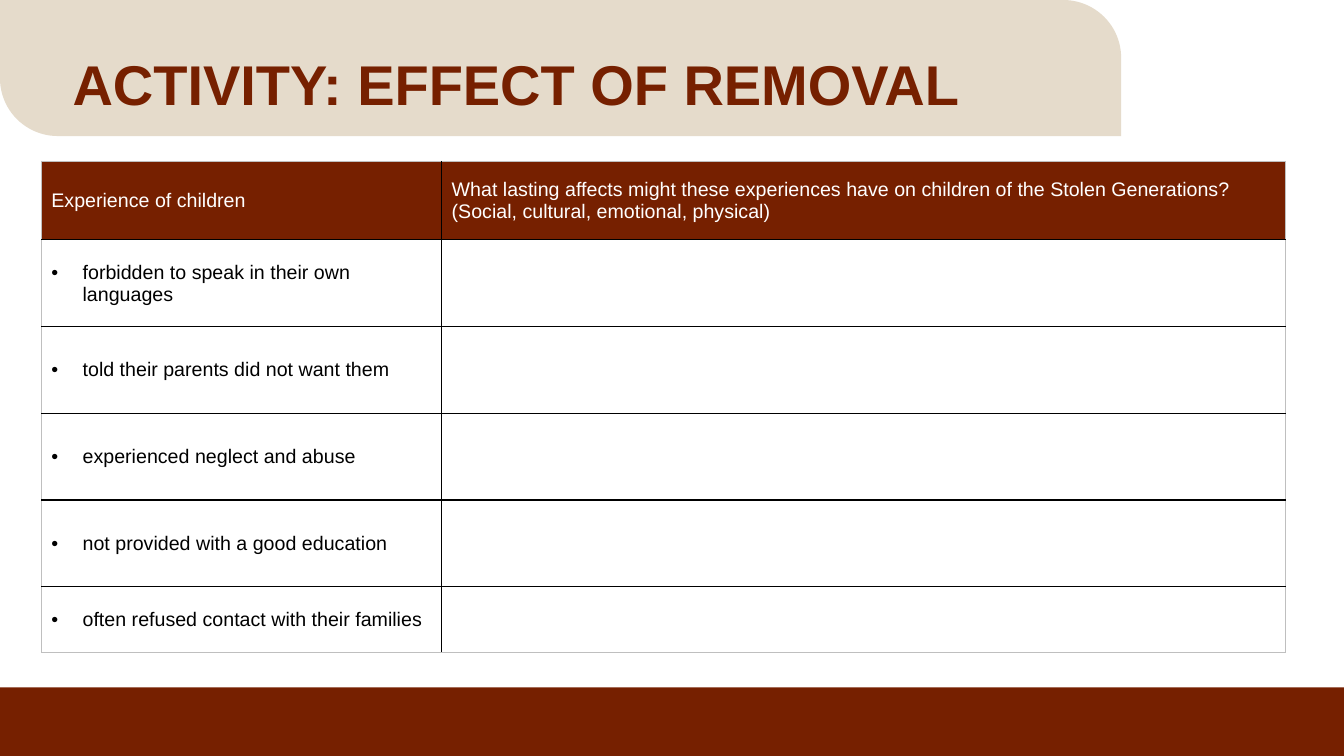
from dataclasses import dataclass

from lxml.etree import SubElement
from pptx import Presentation
from pptx.dml.color import RGBColor
from pptx.enum.shapes import MSO_SHAPE
from pptx.enum.text import MSO_ANCHOR, MSO_AUTO_SIZE, PP_ALIGN
from pptx.oxml.ns import qn
from pptx.util import Inches, Pt

FONT = "Arial"
RUST, SAND, BLACK, WHITE, GREY = "762000", "E5DBCB", "000000", "FFFFFF", "BFBFBF"


@dataclass
class Band:
    kind: MSO_SHAPE
    box: tuple[float, ...]
    fill: str


@dataclass
class Row:
    height: float
    left: list[str]
    right: list[str]
    head: bool = False


BANDS = [
    Band(MSO_SHAPE.RECTANGLE, (0, 6.82, 13.33, 0.68), RUST),
    Band(MSO_SHAPE.ROUND_2_DIAG_RECTANGLE, (0, 0, 11.12, 1.35), SAND),
]
COLS = [3.97, 8.37]
ROWS = [
    Row(0.78, ["Experience of children"],
        ["What lasting affects might these experiences have on children of the Stolen Generations?",
         "(Social, cultural, emotional, physical)"], True),
    Row(0.86, ["forbidden to speak in their own languages"], []),
    Row(0.86, ["told their parents did not want them"], []),
    Row(0.86, ["experienced neglect and abuse"], []),
    Row(0.86, ["not provided with a good education"], []),
    Row(0.65, ["often refused contact with their families"], []),
]


def paint(target, color: str) -> None:
    """Give a fill or a font a solid colour."""
    if hasattr(target, "solid"):
        target.solid()
        target.fore_color.rgb = RGBColor.from_string(color)
    else:
        target.color.rgb = RGBColor.from_string(color)


def write(par, text: str, size: int, color: str, bold: bool = False) -> None:
    run = par.add_run()
    run.text = text
    run.font.name, run.font.size, run.font.bold = FONT, Pt(size), bold
    paint(run.font, color)


def add_band(slide, band: Band) -> None:
    shape = slide.shapes.add_shape(band.kind, *map(Inches, band.box))
    shape.shadow.inherit = False
    paint(shape.fill, band.fill)
    shape.line.fill.background()
    if band.kind == MSO_SHAPE.ROUND_2_DIAG_RECTANGLE:
        shape.adjustments[0], shape.adjustments[1] = 0.425, 0
        shape._element.spPr.find(qn("a:xfrm")).set("flipH", "1")
    # Bands lie behind the title
    slide.shapes._spTree.insert(2, shape._element)


def add_edges(cell, row: int, col: int) -> None:
    """Black rules inside the table, a thin grey frame around it."""
    outer = {"L": col == 0, "R": col == len(COLS) - 1,
             "T": row == 0, "B": row == len(ROWS) - 1}
    props = cell._tc.get_or_add_tcPr()
    for side, edge in outer.items():
        width = Pt(0.5) if edge else Pt(1)
        line = SubElement(props, qn(f"a:ln{side}"), w=str(width))
        fill = SubElement(line, qn("a:solidFill"))
        SubElement(fill, qn("a:srgbClr"), val=GREY if edge else BLACK)


def add_bullet(par) -> None:
    props = par._p.get_or_add_pPr()
    props.set("marL", str(Inches(0.31)))
    props.set("indent", str(Inches(-0.31)))
    SubElement(props, qn("a:buFont"), typeface=FONT)
    SubElement(props, qn("a:buChar"), char="•")


def fill_cell(cell, lines: list[str], head: bool) -> None:
    cell.vertical_anchor = MSO_ANCHOR.MIDDLE
    if head:
        paint(cell.fill, RUST)
    else:
        cell.fill.background()
    frame = cell.text_frame
    for num, text in enumerate(lines):
        par = frame.add_paragraph() if num else frame.paragraphs[0]
        if not head:
            add_bullet(par)
        write(par, text, 14, WHITE if head else BLACK)


def add_grid(slide) -> None:
    high = sum(row.height for row in ROWS)
    table = slide.shapes.add_table(
        len(ROWS), len(COLS), Inches(0.41), Inches(1.6),
        Inches(sum(COLS)), Inches(high)).table
    table.first_row = table.horz_banding = False
    for col, width in enumerate(COLS):
        table.columns[col].width = Inches(width)
    for num, row in enumerate(ROWS):
        table.rows[num].height = Inches(row.height)
        for col, lines in enumerate((row.left, row.right)):
            cell = table.cell(num, col)
            add_edges(cell, num, col)
            fill_cell(cell, lines, row.head)


def add_title(slide) -> None:
    title = slide.shapes.title
    title.left, title.top, title.width, title.height = map(Inches, (0.62, 0.37, 11.58, 0.62))
    frame = title.text_frame
    frame.word_wrap = True
    frame.auto_size = MSO_AUTO_SIZE.NONE
    frame.vertical_anchor = MSO_ANCHOR.TOP
    frame.margin_top, frame.margin_bottom = Inches(0.12), 0
    par = frame.paragraphs[0]
    par.alignment = PP_ALIGN.LEFT
    write(par, "ACTIVITY: EFFECT OF REMOVAL", 40, RUST, True)


def main() -> None:
    deck = Presentation()
    deck.slide_width, deck.slide_height = Inches(13.33), Inches(7.5)
    slide = deck.slides.add_slide(deck.slide_layouts[5])
    # Background bands, then title and table
    for band in BANDS:
        add_band(slide, band)
    add_title(slide)
    add_grid(slide)
    deck.save("out.pptx")


if __name__ == "__main__":
    main()
